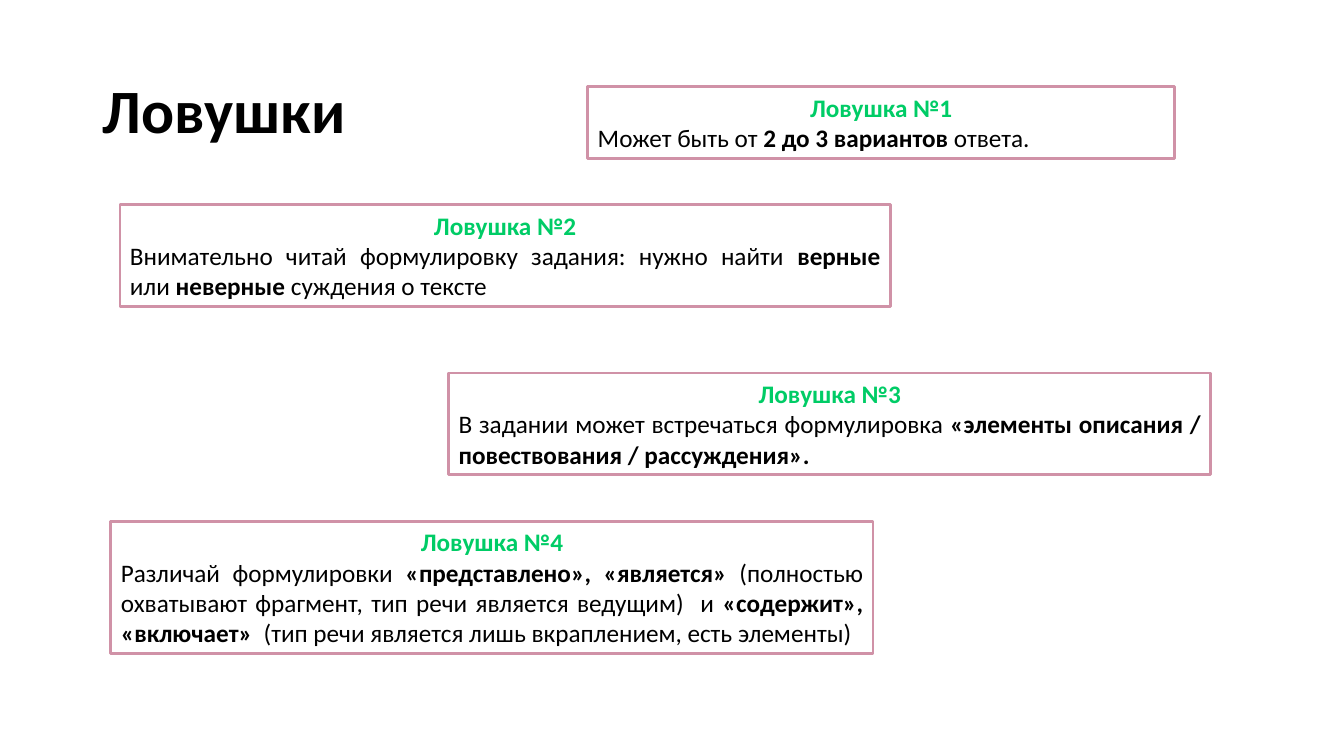
"""Build the slide listing four traps in tasks about types of speech."""
from pptx import Presentation
from pptx.dml.color import RGBColor
from pptx.enum.shapes import MSO_SHAPE
from pptx.enum.text import MSO_ANCHOR, MSO_AUTO_SIZE, PP_ALIGN
from pptx.util import Inches, Pt

COLORS = {"text": "000000", "heading": "00CC66", "border": "D092A7", "fill": "FFFFFF"}
TRAPS = [
    ((5.83, 0.86, 5.82, 0.71),
     ["Может быть от ", "2 до 3 вариантов ", "ответа."]),
    ((1.19, 2.03, 7.64, 1.01),
     ["Внимательно читай формулировку задания: нужно найти ", "верные", " или ",
      "неверные", " суждения о тексте"]),
    ((4.45, 3.7, 7.56, 1.01),
     ["В задании может встречаться формулировка ",
      "«элементы описания / повествования / рассуждения»."]),
    ((1.1, 5.17, 7.56, 1.31),
     ["Различай формулировки ", "«представлено», «является»",
      " (полностью охватывают фрагмент, тип речи является ведущим)  и ",
      "«содержит», «включает»  ",
      "(тип речи является лишь вкраплением, есть элементы) "]),
]


def color(name):
    return RGBColor.from_string(COLORS[name])


def add_run(p, text, ink, **formats):
    r = p.add_run()
    r.text = text
    for key, value in {"name": "Calibri", "size": Pt(18), **formats}.items():
        setattr(r.font, key, value)
    r.font.color.rgb = color(ink)


prs = Presentation()
prs.slide_width, prs.slide_height = Inches(13.33), Inches(7.5)
s = prs.slides.add_slide(prs.slide_layouts[5])

title = s.shapes.title
title.left, title.top, title.width, title.height = map(Inches, (0.92, 0.4, 11.5, 1.45))
title.text_frame.vertical_anchor = MSO_ANCHOR.MIDDLE
p = title.text_frame.paragraphs[0]
p.alignment, p.line_spacing = PP_ALIGN.LEFT, 0.9
add_run(p, "Ловушки", "text", size=Pt(44), bold=True)

for number, (box, parts) in enumerate(TRAPS, 1):
    sp = s.shapes.add_shape(MSO_SHAPE.RECTANGLE, *map(Inches, box))
    sp.shadow.inherit = False
    sp.fill.solid()
    sp.fill.fore_color.rgb = color("fill")
    sp.line.color.rgb = color("border")
    sp.line.width = Pt(2)
    tf = sp.text_frame
    tf.word_wrap = True
    tf.auto_size = MSO_AUTO_SIZE.SHAPE_TO_FIT_TEXT
    tf.vertical_anchor = MSO_ANCHOR.MIDDLE
    p = tf.paragraphs[0]
    p.alignment = PP_ALIGN.CENTER
    add_run(p, f"Ловушка №{number}", "heading", bold=True)
    p = tf.add_paragraph()
    p.alignment = PP_ALIGN.JUSTIFY
    for i, text in enumerate(parts):
        add_run(p, text, "text", bold=i % 2 == 1)

prs.save("out.pptx")
